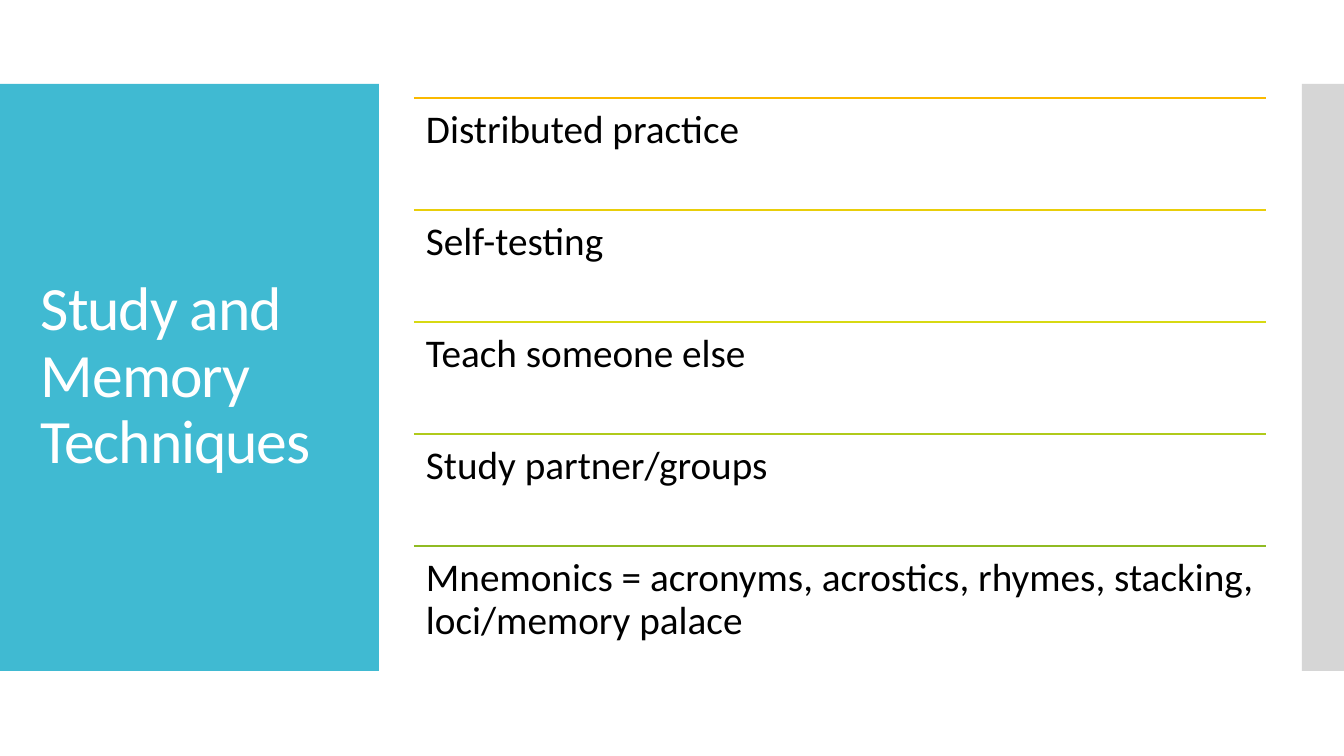
from lxml.etree import SubElement
from pptx import Presentation
from pptx.dml.color import RGBColor
from pptx.enum.shapes import MSO_CONNECTOR, MSO_SHAPE
from pptx.enum.text import MSO_ANCHOR
from pptx.oxml.ns import qn
from pptx.util import Pt

TITLE = "Study and Memory Techniques"
TECHNIQUES = [  # text, rule colour
    ("Distributed practice", "FAB900"),
    ("Self-testing", "E9CE0A"),
    ("Teach someone else", "D7D913"),
    ("Study partner/groups", "B0CA1B"),
    ("Mnemonics = acronyms, acrostics, rhymes, stacking, loci/memory palace", "90BB23"),
]
FONT = "Calibri"
SLIDE_W, SLIDE_H = 1344, 756
BAND_TOP, BAND_H = 84, 587
LIST_LEFT, LIST_TOP, LIST_W, ROW_H = 414, 98, 852, 112


def px(n):
    return round(n * 914400 / 134.4)


def rgb(code):
    return RGBColor.from_string(code)


def add_panel(left, width, color):
    panel = slide.shapes.add_shape(
        MSO_SHAPE.RECTANGLE, px(left), px(BAND_TOP), px(width), px(BAND_H))
    panel.shadow.inherit = False
    panel.fill.solid()
    panel.fill.fore_color.rgb = rgb(color)
    panel.line.fill.background()


def add_rule(top, color):
    y = px(top)
    rule = slide.shapes.add_connector(
        MSO_CONNECTOR.STRAIGHT, px(LIST_LEFT), y, px(LIST_LEFT + LIST_W), y)
    rule.line.color.rgb = rgb(color)
    rule.line.width = Pt(0.85)
    SubElement(rule._element.spPr, qn("a:effectLst"))


def add_text(text, box, size, color, inset_x, inset_y, anchor=MSO_ANCHOR.TOP):
    frame = slide.shapes.add_textbox(*map(px, box)).text_frame
    frame.word_wrap = True
    frame.vertical_anchor = anchor
    frame.margin_left = frame.margin_right = px(inset_x)
    frame.margin_top = frame.margin_bottom = px(inset_y)
    paragraph = frame.paragraphs[0]
    paragraph.text = text
    paragraph.line_spacing = 0.9
    paragraph.font.name = FONT
    paragraph.font.size = Pt(size)
    paragraph.font.color.rgb = rgb(color)
    return paragraph


prs = Presentation()
prs.slide_width, prs.slide_height = px(SLIDE_W), px(SLIDE_H)
slide = prs.slides.add_slide(prs.slide_layouts[6])

# Side panels
add_panel(0, 379, "40BAD2")
add_panel(1302, 42, "D6D6D6")

# Title, with slightly tightened letters
title = add_text(TITLE, (28, 124, 325, 507), 33, "FFFFFF", 13, 7, MSO_ANCHOR.MIDDLE)
title.runs[0].font._element.set("spc", "-60")

# Techniques, each under its own rule
for row, (technique, color) in enumerate(TECHNIQUES):
    top = LIST_TOP + row * ROW_H
    add_rule(top, color)
    add_text(technique, (LIST_LEFT, top, LIST_W, ROW_H), 21, "000000", 12, 12)

prs.save("out.pptx")
